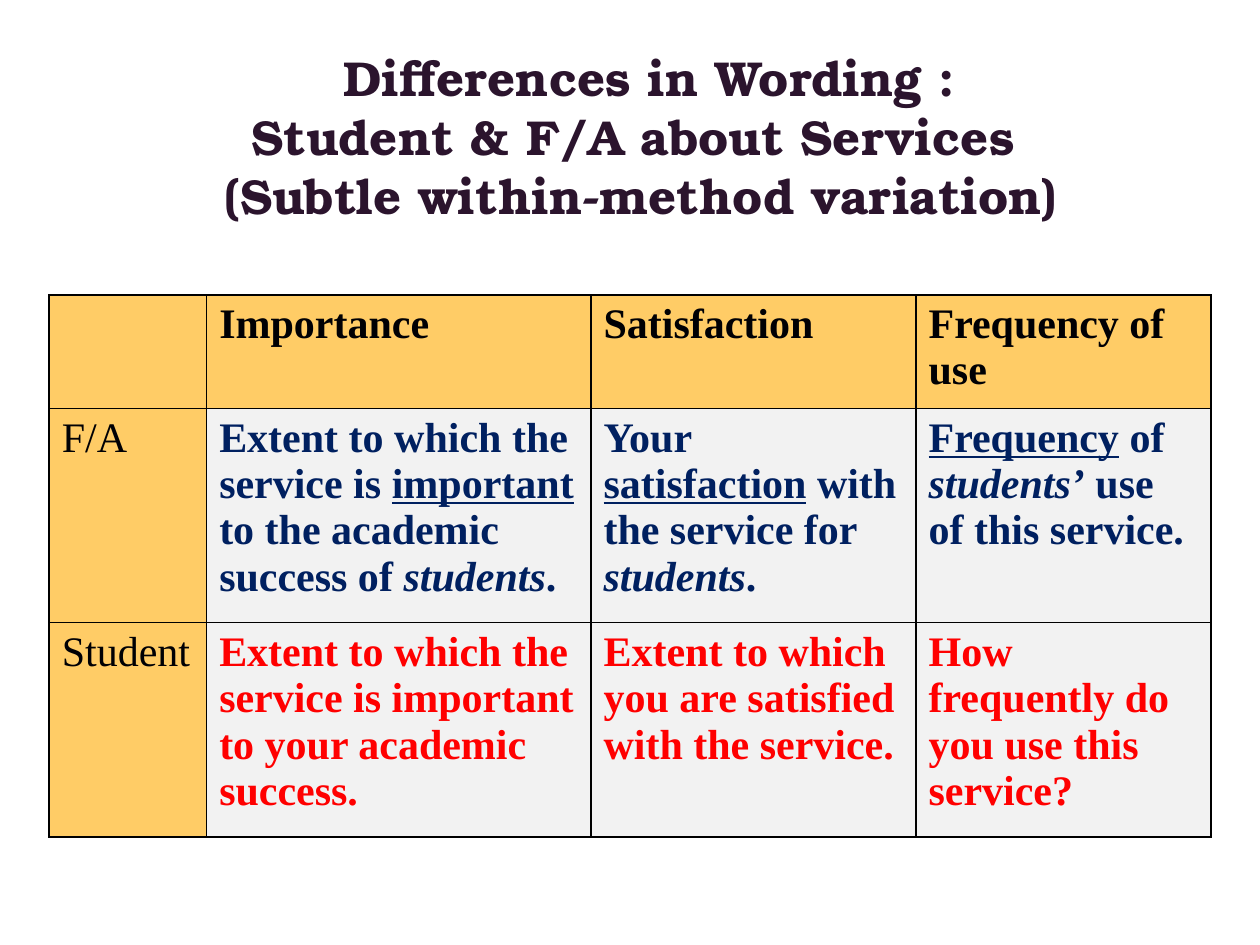
from lxml.etree import SubElement
from pptx import Presentation
from pptx.dml.color import RGBColor
from pptx.enum.text import MSO_ANCHOR, MSO_AUTO_SIZE, PP_ALIGN
from pptx.oxml.ns import qn
from pptx.util import Inches, Pt

COLORS = {
    "title": "2B142D", "label": "000004", "staff": "002060", "student": "FF0000",
    "header": "FFCC66", "body": "F2F2F2", "border": "000000",
}
TITLE_FONT, TABLE_FONT = "TeX Gyre Bonum", "Times New Roman"

TITLE = [
    ["Differences in Wording :", "Student & F/A about Services  "],
    ["(Subtle within-method variation) "],
]

# Each cell is a list of (text, style) spans; style is "", "underline" or "italic".
ROWS = [
    [[], [("Importance", "")], [("Satisfaction", "")], [("Frequency of use", "")]],
    [
        [("F/A", "")],
        [("Extent to which the service is ", ""), ("important", "underline"),
         (" to the academic success of", ""), (" students", "italic"), (".", "")],
        [("Your ", ""), ("satisfaction", "underline"),
         (" with the service for ", ""), ("students", "italic"), (".", "")],
        [("Frequency", "underline"), (" of ", ""), ("students’", "italic"),
         (" use of this service.", "")],
    ],
    [
        [("Student", "")],
        [("Extent to which the service is important to your academic success.", "")],
        [("Extent to which you are satisfied with the service.", "")],
        [("How frequently do you use this service?", "")],
    ],
]
ROW_COLORS = ["label", "staff", "student"]
COLUMN_WIDTHS = [1.25, 3.05, 2.58, 2.34]
ROW_HEIGHTS = [0.84, 1.57, 1.58]


def style_font(font, name, size, color, bold):
    font.name, font.size, font.bold = name, Pt(size), bold
    font.color.rgb = RGBColor.from_string(COLORS[color])


def add_borders(cell):
    properties = cell._tc.get_or_add_tcPr()
    for position, side in enumerate(("lnL", "lnR", "lnT", "lnB")):
        line = properties.makeelement(qn(f"a:{side}"), {"w": str(Pt(1))})
        fill = SubElement(line, qn("a:solidFill"))
        SubElement(fill, qn("a:srgbClr"), val=COLORS["border"])
        properties.insert(position, line)  # borders must precede the cell fill


def add_title(page):
    box = page.shapes.title
    box.left, box.top = Inches(0.7), Inches(0.33)
    box.width, box.height = Inches(8.91), Inches(1.51)
    frame = box.text_frame
    frame.word_wrap = True
    frame.auto_size = MSO_AUTO_SIZE.SHAPE_TO_FIT_TEXT
    frame.vertical_anchor = MSO_ANCHOR.TOP
    for index, lines in enumerate(TITLE):
        para = frame.add_paragraph() if index else frame.paragraphs[0]
        para.alignment = PP_ALIGN.CENTER
        for number, line in enumerate(lines):
            if number:
                para.add_line_break()
            span = para.add_run()
            span.text = line
            style_font(span.font, TITLE_FONT, 28, "title", True)


def add_wording_table(page):
    table = page.shapes.add_table(
        len(ROWS), len(COLUMN_WIDTHS), Inches(0.39), Inches(2.34),
        Inches(sum(COLUMN_WIDTHS)), Inches(sum(ROW_HEIGHTS))).table
    for column, width in zip(table.columns, COLUMN_WIDTHS):
        column.width = Inches(width)
    for row, height in zip(table.rows, ROW_HEIGHTS):
        row.height = Inches(height)

    for r, row in enumerate(ROWS):
        for c, spans in enumerate(row):
            cell = table.cell(r, c)
            fill = "header" if r == 0 or c == 0 else "body"
            cell.fill.solid()
            cell.fill.fore_color.rgb = RGBColor.from_string(COLORS[fill])
            add_borders(cell)
            para = cell.text_frame.paragraphs[0]
            for text, style in spans:
                span = para.add_run()
                span.text = text
                color = ROW_COLORS[r] if c else "label"
                style_font(span.font, TABLE_FONT, 24, color, c > 0)
                span.font.underline = style == "underline"
                span.font.italic = style == "italic"


def main():
    deck = Presentation()
    deck.slide_width, deck.slide_height = Inches(10), Inches(7.5)
    page = deck.slides.add_slide(deck.slide_layouts[5])
    add_title(page)
    add_wording_table(page)
    deck.save("out.pptx")


if __name__ == "__main__":
    main()
